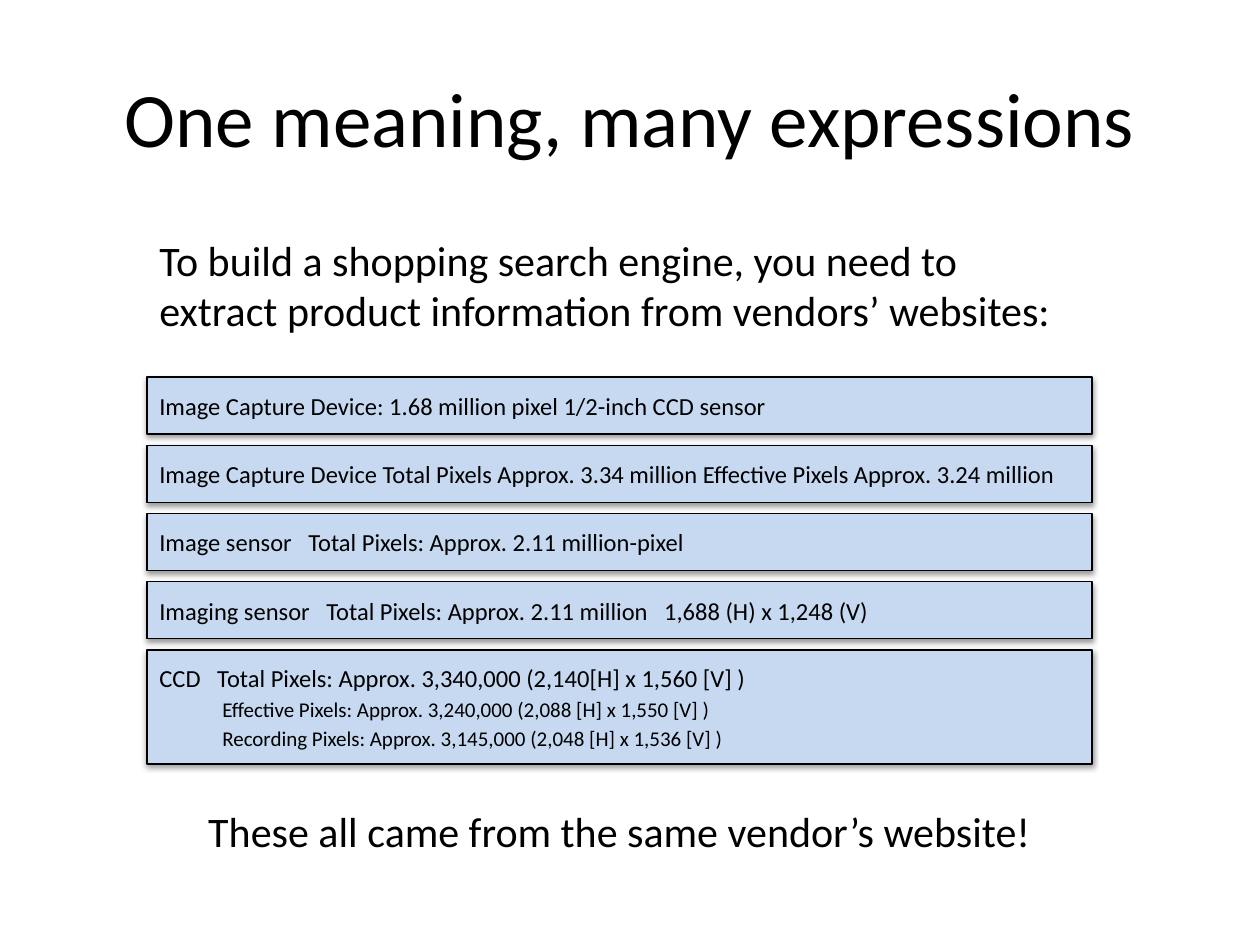
from lxml import etree
from pptx import Presentation
from pptx import util as u
from pptx.dml.color import RGBColor
from pptx.enum import shapes, text
from pptx.oxml import ns

PX = 914400 / 126  # EMU per pixel
LEFT, WIDTH = 147, 945


def px(*lengths):
    return [u.Emu(round(length * PX)) for length in lengths]


def add_text(para, words, size):
    span = para.add_run()
    span.text = words
    span.font.size = u.Pt(size)
    span.font.name = "Calibri"
    span.font.color.rgb = RGBColor.from_string("000000")


deck = Presentation()
deck.slide_width, deck.slide_height = px(1260, 945)
page = deck.slides.add_slide(deck.slide_layouts[5])

# Title
title = page.shapes.title
title.left, title.top, title.width, title.height = px(63, 38, 1134, 157)
title.text_frame.vertical_anchor = text.MSO_ANCHOR.MIDDLE
para = title.text_frame.paragraphs[0]
para.alignment = text.PP_ALIGN.CENTER
add_text(para, "One meaning, many expressions", 44)

# Vendor descriptions: each line is (words, level)
descriptions = [
    [("Image Capture Device: 1.68 million pixel 1/2-inch CCD sensor", 0)],
    [("Image Capture Device Total Pixels Approx. 3.34 million "
      "Effective Pixels Approx. 3.24 million", 0)],
    [("Image sensor   Total Pixels: Approx. 2.11 million-pixel", 0)],
    [("Imaging sensor   Total Pixels: Approx. 2.11 million   1,688 (H) x 1,248 (V)", 0)],
    [("CCD   Total Pixels: Approx. 3,340,000 (2,140[H] x 1,560 [V] )", 0),
     ("Effective Pixels: Approx. 3,240,000 (2,088 [H] x 1,550 [V] )", 1),
     ("Recording Pixels: Approx. 3,145,000 (2,048 [H] x 1,536 [V] )", 1)],
]
# Per level: text size, left margin and first-line indent in px
levels = [(14, 47, -47), (12, 95, -32)]
FIRST_TOP, PITCH, ROW_HEIGHT = 377, 68.25, 57

for row, lines in enumerate(descriptions):
    height = ROW_HEIGHT if len(lines) == 1 else 2 * ROW_HEIGHT
    box = page.shapes.add_shape(
        shapes.MSO_SHAPE.RECTANGLE, *px(LEFT, FIRST_TOP + row * PITCH, WIDTH, height))
    box.fill.solid()
    box.fill.fore_color.rgb = RGBColor.from_string("C6D9F1")
    box.line.color.rgb = RGBColor.from_string("000000")
    box.line.width = u.Pt(0.75)

    # Soft shadow straight below
    box.shadow.inherit = False
    effects = box._element.spPr.find(ns.qn("a:effectLst"))
    shadow = etree.SubElement(effects, ns.qn("a:outerShdw"), blurRad="40000",
                              dist="20000", dir="5400000", rotWithShape="0")
    tint = etree.SubElement(shadow, ns.qn("a:srgbClr"), val="000000")
    etree.SubElement(tint, ns.qn("a:alpha"), val="38000")

    frame = box.text_frame
    frame.word_wrap = True
    frame.vertical_anchor = text.MSO_ANCHOR.MIDDLE
    frame.margin_left = frame.margin_right = u.Inches(0.1)
    frame.margin_top = frame.margin_bottom = u.Inches(0.1)
    for number, (words, level) in enumerate(lines):
        para = frame.paragraphs[0] if number == 0 else frame.add_paragraph()
        size, margin, indent = levels[level]
        para.level = level
        para.alignment = text.PP_ALIGN.LEFT
        para.space_before = u.Pt(size * 0.2)
        props = para._p.get_or_add_pPr()
        for name, length in (("marL", margin), ("indent", indent)):
            props.set(name, str(px(length)[0]))
        add_text(para, words, size)

# Introduction and conclusion
remarks = [
    (228, 115, text.PP_ALIGN.LEFT, "To build a shopping search engine, you need to "
     "extract product information from vendors’ websites:"),
    (799, 63, text.PP_ALIGN.CENTER, "These all came from the same vendor’s website!"),
]
for top, height, alignment, words in remarks:
    box = page.shapes.add_textbox(*px(LEFT, top, WIDTH, height))
    box.text_frame.word_wrap = True
    box.text_frame.auto_size = text.MSO_AUTO_SIZE.SHAPE_TO_FIT_TEXT
    para = box.text_frame.paragraphs[0]
    para.alignment = alignment
    add_text(para, words, 24)

deck.save("out.pptx")
